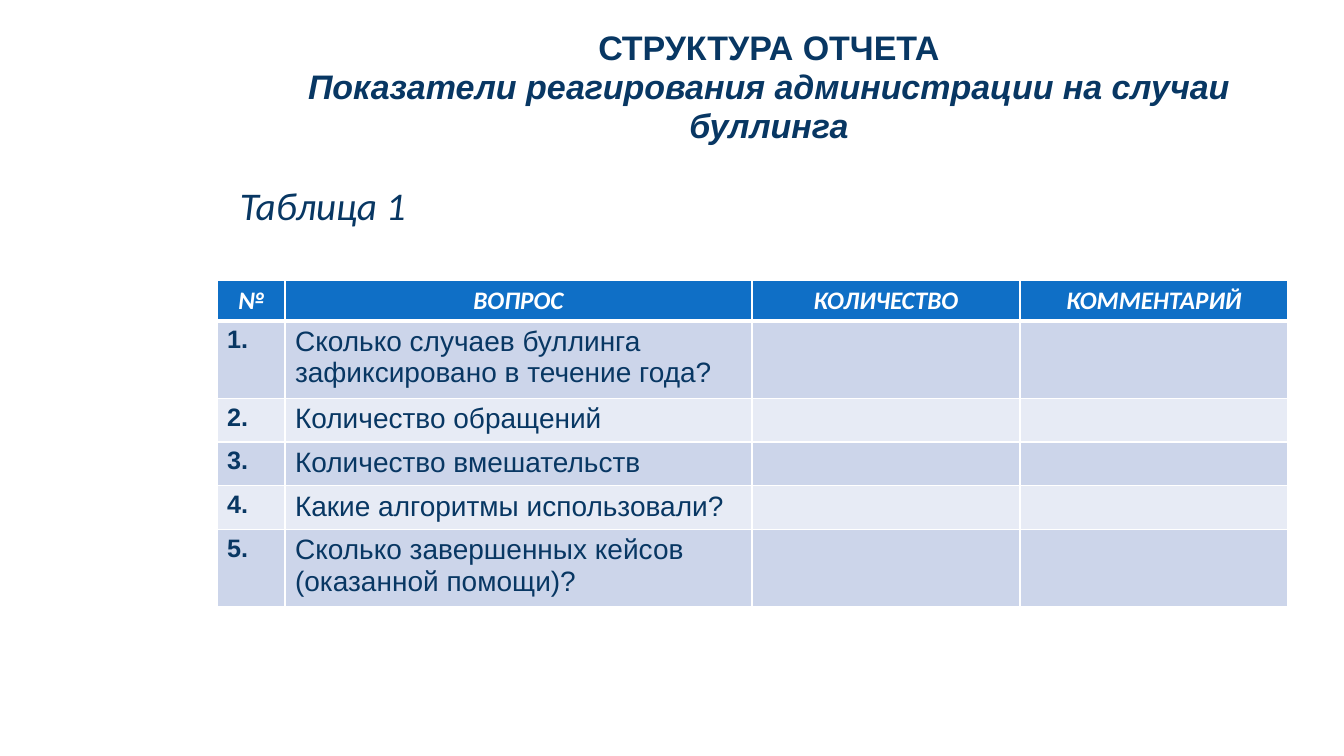
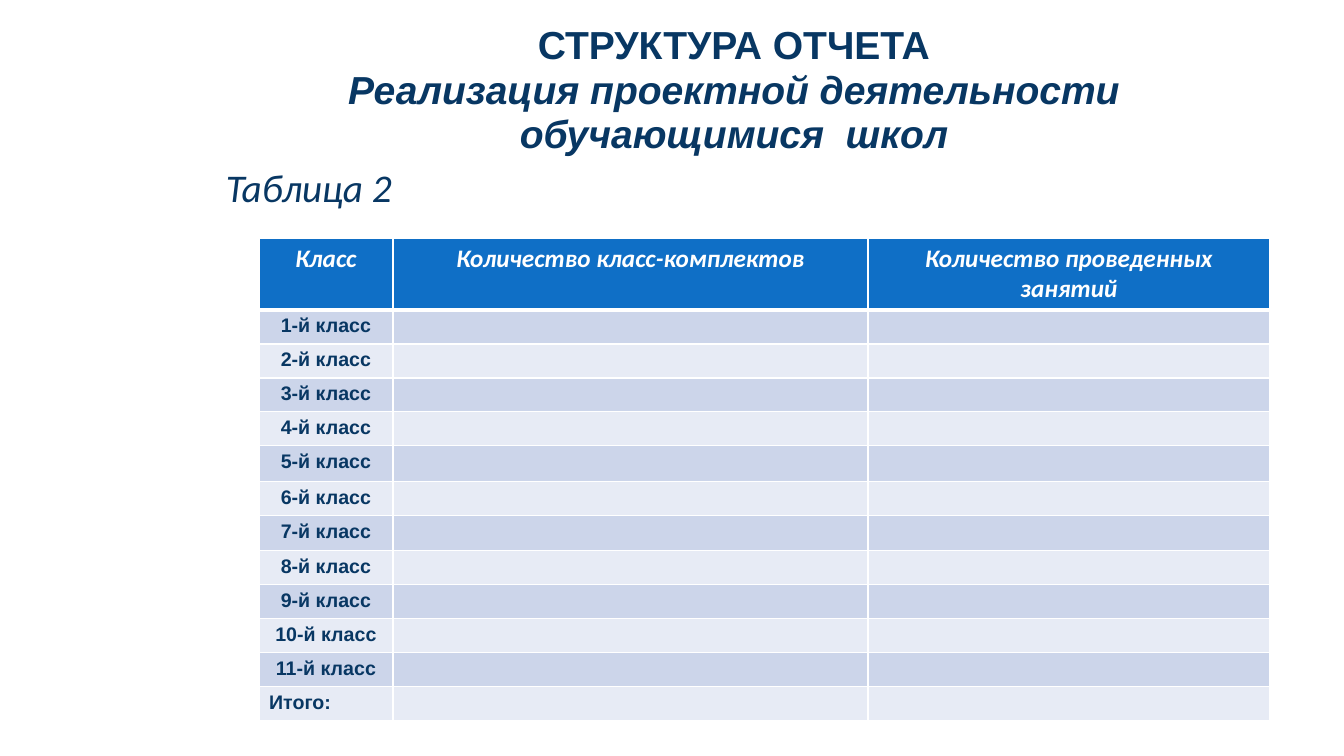
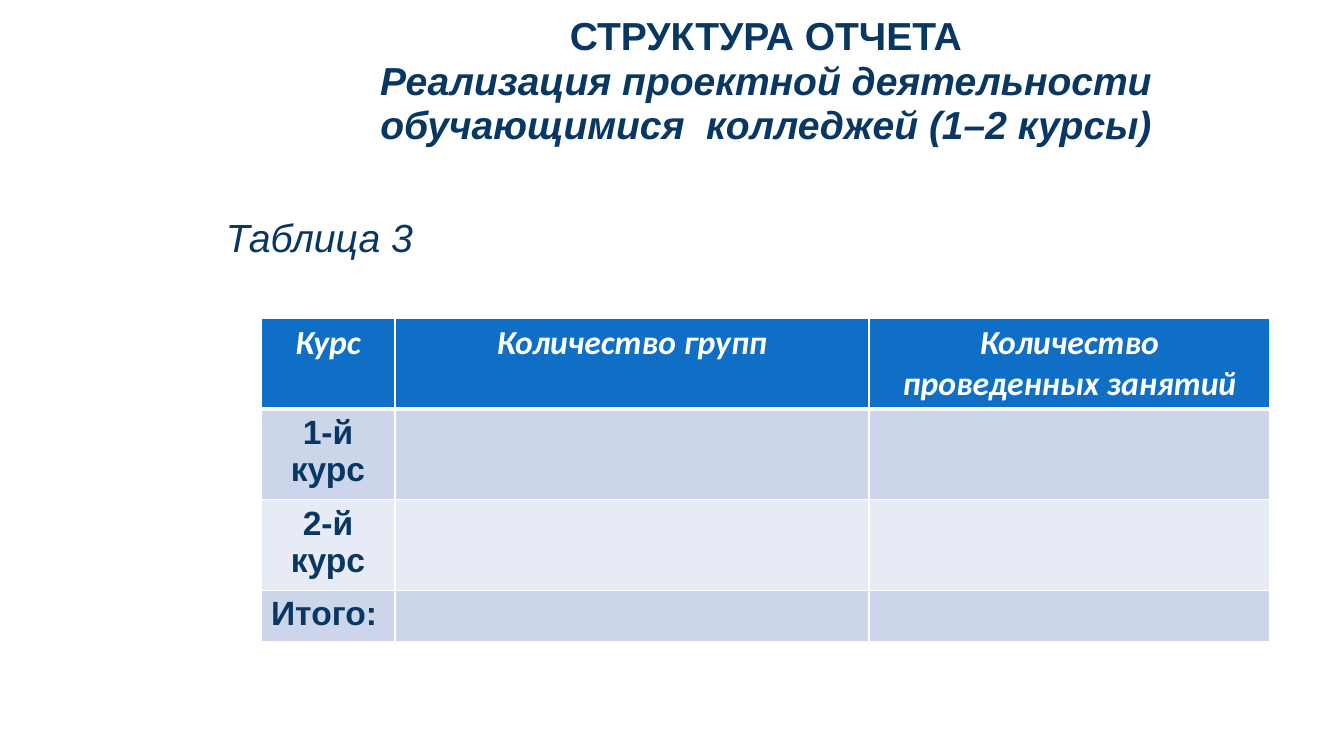
import pptx
import pptx.util
import pptx.dml.color
import pptx.enum.text
import pptx.oxml.ns
import lxml.etree

SCALE = 914400 / 100.8
COLORS = {"navy": "083763", "header": "0F6FC6", "odd": "CCD5EA", "even": "E7EBF5", "white": "FFFFFF"}
ALIGN = pptx.enum.text.PP_ALIGN
ANCHOR = pptx.enum.text.MSO_ANCHOR


def px(*lengths):
    return [pptx.util.Emu(round(length * SCALE)) for length in lengths]


def add_span(para, text, size, color="navy", **formats):
    span = para.add_run()
    span.text = text
    span.font.size = pptx.util.Pt(size)
    span.font.color.rgb = pptx.dml.color.RGBColor.from_string(COLORS[color])
    for name, value in ({"name": "Arial", "bold": False, "italic": False} | formats).items():
        setattr(span.font, name, value)


questions = [
    "Сколько случаев буллинга зафиксировано в течение года?",
    "Количество обращений",
    "Количество вмешательств",
    "Какие алгоритмы использовали?",
    "Сколько завершенных кейсов (оказанной помощи)?",
]

slides = [
    {
        "subtitle": "Показатели реагирования администрации на случаи буллинга",
        "title_at": (251, 15, 1036, 146),
        "title_size": 24.3,
        "caption": "Таблица 1",
        "caption_at": (230, 182, 1159 - 45, 528),
        "caption_font": "Calibri",
        "table_at": (217, 280),
        "columns": [68, 467, 268, 268],
        "rows": [41, 73, 41, 41, 42, 72],
        "header": ["№", "ВОПРОС", "КОЛИЧЕСТВО", "КОММЕНТАРИЙ"],
        "header_size": 18,
        "body": [[f"{number}.", question] for number, question in enumerate(questions, 1)],
        "body_size": 18,
        "label_align": ALIGN.LEFT,
    },
    {
        "subtitle": "Реализация проектной деятельности обучающимися  школ",
        "title_at": (216, 18, 1036, 146),
        "title_size": 27.9,
        "caption": "Таблица 2",
        "caption_at": (216, 164, 1128, 495),
        "caption_font": "Calibri",
        "table_at": (259, 238),
        "columns": [134, 475, 402],
        "rows": [72] + [34] * 4 + [36, 34, 35] + [34] * 5,
        "header": ["Класс", "Количество класс-комплектов", "Количество проведенных занятий"],
        "header_size": 18,
        "body": [[f"{grade}-й класс"] for grade in range(1, 12)] + [["Итого:"]],
        "body_size": 14,
        "label_align": ALIGN.CENTER,
    },
    {
        "subtitle": "Реализация проектной деятельности обучающимися  колледжей (1–2 курсы)",
        "title_at": (248, 9, 1036, 146),
        "title_size": 27.9,
        "caption": "Таблица 3",
        "caption_at": (216, 214, 1036, 480),
        "caption_font": "Arial",
        "table_at": (261, 318),
        "columns": [134, 474, 401],
        "rows": [91, 85, 85, 51],
        "header": ["Курс", "Количество групп", "Количество проведенных занятий"],
        "header_size": 24,
        "body": [["1-й курс"], ["2-й курс"], ["Итого:"]],
        "body_size": 24,
        "label_align": ALIGN.CENTER,
    },
]

deck = pptx.Presentation()
deck.slide_width, deck.slide_height = px(1344, 756)

for content in slides:
    page = deck.slides.add_slide(deck.slide_layouts[6])

    title = page.shapes.add_textbox(*px(*content["title_at"])).text_frame
    title.word_wrap = True
    title.vertical_anchor = ANCHOR.MIDDLE
    para = title.paragraphs[0]
    para.alignment = ALIGN.CENTER
    para.line_spacing = 0.95
    add_span(para, "СТРУКТУРА ОТЧЕТА", content["title_size"], bold=True)
    para.add_line_break()
    add_span(para, content["subtitle"], content["title_size"], bold=True, italic=True)

    caption = page.shapes.add_textbox(*px(*content["caption_at"])).text_frame
    caption.word_wrap = True
    para = caption.paragraphs[0]
    para.line_spacing = 0.9
    add_span(para, content["caption"], 28, name=content["caption_font"], italic=True)

    columns, rows = content["columns"], content["rows"]
    place = px(*content["table_at"], sum(columns), sum(rows))
    table = page.shapes.add_table(len(rows), len(columns), *place).table
    for column, width in zip(table.columns, px(*columns)):
        column.width = width
    for row, height in zip(table.rows, px(*rows)):
        row.height = height

    for row_index, texts in enumerate([content["header"]] + content["body"]):
        is_header = row_index == 0
        fill = "header" if is_header else "odd" if row_index % 2 else "even"
        for column_index in range(len(columns)):
            cell = table.cell(row_index, column_index)
            properties = cell._tc.get_or_add_tcPr()
            for edge in ["L", "R", "T", "B"] if is_header else ["L", "R", "B"]:
                weight = 3 if is_header and edge == "B" else 1
                line = lxml.etree.SubElement(properties, pptx.oxml.ns.qn(f"a:ln{edge}"), w=str(pptx.util.Pt(weight)))
                solid = lxml.etree.SubElement(line, pptx.oxml.ns.qn("a:solidFill"))
                lxml.etree.SubElement(solid, pptx.oxml.ns.qn("a:srgbClr"), val=COLORS["white"])
            cell.fill.solid()
            cell.fill.fore_color.rgb = pptx.dml.color.RGBColor.from_string(COLORS[fill])

            para = cell.text_frame.paragraphs[0]
            if column_index >= len(texts):
                size = str(content["body_size"] * 100)
                lxml.etree.SubElement(para._p, pptx.oxml.ns.qn("a:endParaRPr"), sz=size)
                continue
            text = texts[column_index]
            if is_header:
                para.alignment = ALIGN.CENTER
                add_span(para, text, content["header_size"], "white", name="Calibri", bold=True, italic=True)
            elif column_index == 0:
                para.alignment = ALIGN.LEFT if text == "Итого:" else content["label_align"]
                add_span(para, text, content["body_size"], bold=True)
            else:
                add_span(para, text, 20)

deck.save("out.pptx")
